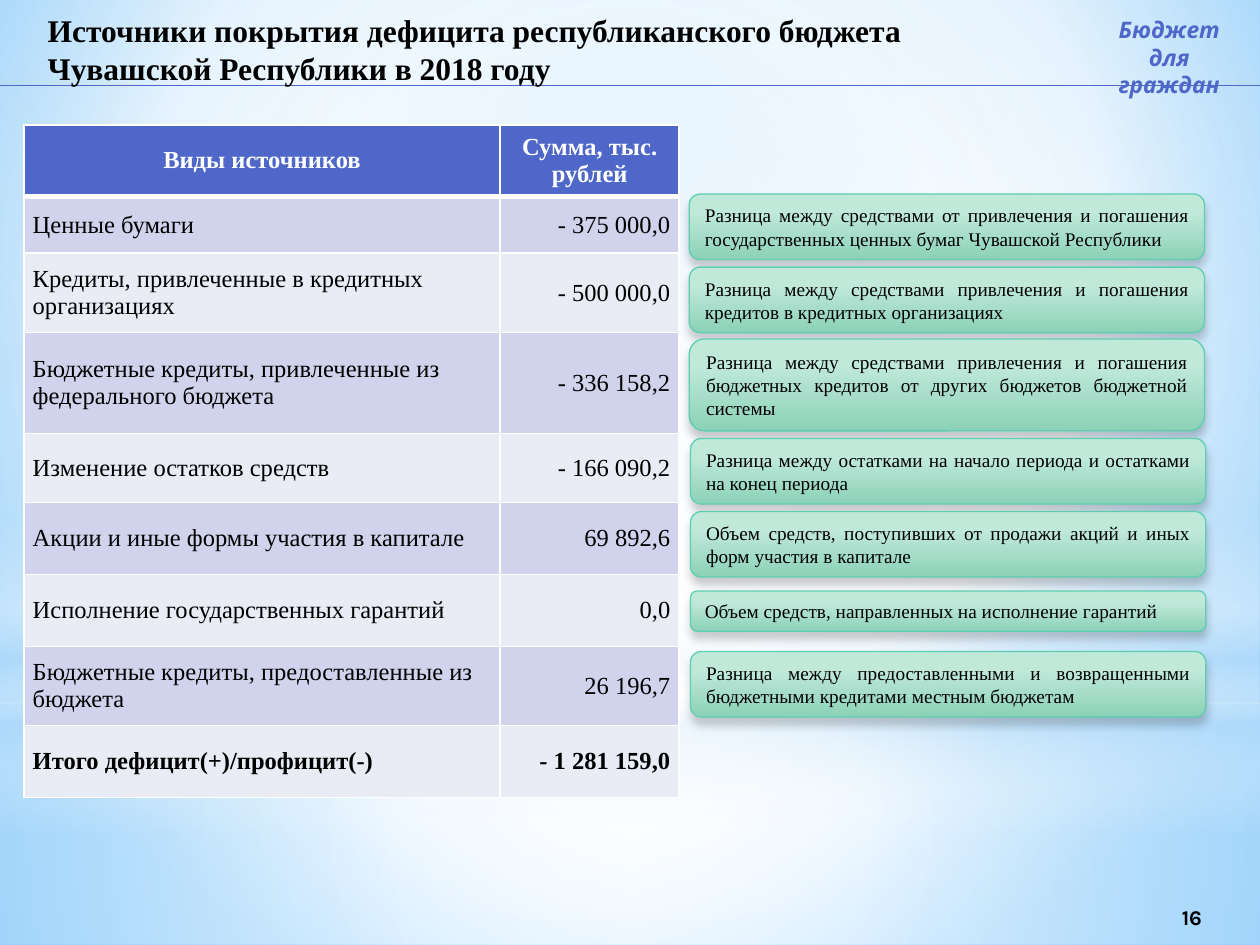
"""Build the slide on sources covering the 2018 republican budget deficit."""
import lxml.etree
import pptx
import pptx.dml.color
import pptx.enum.shapes
import pptx.enum.text
import pptx.oxml
import pptx.oxml.ns
import pptx.util

Inches = pptx.util.Inches
Pt = pptx.util.Pt
RGBColor = pptx.dml.color.RGBColor
ALIGN = pptx.enum.text.PP_ALIGN
ANCHOR = pptx.enum.text.MSO_ANCHOR
SHAPE = pptx.enum.shapes.MSO_SHAPE
qn = pptx.oxml.ns.qn
NAMESPACE = pptx.oxml.ns.nsdecls("a")

BLACK = RGBColor(0x00, 0x00, 0x00)
WHITE = RGBColor(0xFF, 0xFF, 0xFF)
BLUE = RGBColor(0x4E, 0x67, 0xC8)
BAND_DARK = RGBColor(0xD0, 0xD3, 0xEB)
BAND_LIGHT = RGBColor(0xE9, 0xEB, 0xF5)
SKY = RGBColor(0xB4, 0xDC, 0xFA)
SKY_CENTER = RGBColor(0x9E, 0xD5, 0xFF)
SKY_EDGE = RGBColor(0x5B, 0xB9, 0xFF)
MINT_LIGHT = RGBColor(0xC0, 0xE9, 0xDA)
MINT_DARK = RGBColor(0x8C, 0xD1, 0xB8)
MINT_LINE = RGBColor(0x5D, 0xCE, 0xAF)
SERIF = "Times New Roman"
SANS = "Karla"
CENTERED = (50, 50, 50, 50)


def set_gradient(fill, element, stops, focus=None):
    fill.gradient()
    gradient = element.find(".//" + qn("a:gradFill"))
    stop_xml = "".join(
        f'<a:gs pos="{position * 1000}"><a:srgbClr val="{color}">'
        f'<a:alpha val="{opacity * 1000}"/></a:srgbClr></a:gs>'
        for position, color, opacity in stops)
    direction = '<a:lin ang="5400000" scaled="0"/>'
    if focus:
        left, top, right, bottom = (side * 1000 for side in focus)
        direction = (f'<a:path path="circle"><a:fillToRect l="{left}" t="{top}" '
                     f'r="{right}" b="{bottom}"/></a:path>')
    gradient.getparent().replace(gradient, pptx.oxml.parse_xml(
        f'<a:gradFill {NAMESPACE} rotWithShape="1"><a:gsLst>{stop_xml}</a:gsLst>'
        f'{direction}</a:gradFill>'))


def add_run(paragraph, text, size, color, font=SERIF, bold=False, italic=False):
    run = paragraph.add_run()
    run.text = text
    run.font.size = Pt(size)
    run.font.name = font
    run.font.bold = bold
    run.font.italic = italic
    run.font.color.rgb = color


presentation = pptx.Presentation()
presentation.slide_width = Inches(10)
presentation.slide_height = Inches(7.5)
slide = presentation.slides.add_slide(presentation.slide_layouts[6])

set_gradient(slide.background.fill, slide.element,
             [(0, SKY_CENTER, 100), (60, WHITE, 100), (100, SKY_EDGE, 100)],
             (20, 10, 20, 60))

backdrops = [
    (SHAPE.RECTANGLE, 5.58, 1.92, CENTERED,
     [(0, WHITE, 91), (37, WHITE, 76), (100, SKY, 79)]),
    (SHAPE.RECTANGLE, 0, 5.58, CENTERED,
     [(0, WHITE, 89), (48, WHITE, 62), (100, SKY, 79)]),
    (SHAPE.RECTANGLE, 4.12, 2.5, None,
     [(0, WHITE, 0), (29, WHITE, 30), (45, SKY, 40),
      (55, WHITE, 26), (65, SKY, 60), (100, WHITE, 0)]),
    (SHAPE.OVAL, 1.75, 5.58, CENTERED, [(0, WHITE, 100), (56, WHITE, 0)]),
]
for kind, top, height, focus, stops in backdrops:
    shape = slide.shapes.add_shape(kind, 0, Inches(top), Inches(10), Inches(height))
    shape.shadow.inherit = False
    shape.line.fill.background()
    set_gradient(shape.fill, shape.element, stops, focus)

sources = [
    ("Виды источников", "Сумма, тыс. рублей", 0.57),
    ("Ценные бумаги", "- 375 000,0", 0.45),
    ("Кредиты, привлеченные в кредитных организациях", "- 500 000,0", 0.63),
    ("Бюджетные кредиты, привлеченные из федерального бюджета", "- 336 158,2", 0.8),
    ("Изменение остатков средств", "- 166 090,2", 0.55),
    ("Акции и иные формы участия в капитале", "69 892,6", 0.57),
    ("Исполнение государственных гарантий", "0,0", 0.57),
    ("Бюджетные кредиты, предоставленные из бюджета", "26 196,7", 0.63),
    ("Итого дефицит(+)/профицит(-)", "- 1 281 159,0", 0.57),
]
table = slide.shapes.add_table(len(sources), 2, Inches(0.19), Inches(0.99),
                               Inches(5.2), Inches(5.36)).table
table.columns[0].width = Inches(3.78)
table.columns[1].width = Inches(1.42)
for row, (name, amount, height) in enumerate(sources):
    table.rows[row].height = Inches(height)
    header = row == 0
    for column, text in enumerate((name, amount)):
        cell = table.cell(row, column)
        cell.vertical_anchor = ANCHOR.MIDDLE
        cell.margin_left = cell.margin_right = Inches(0.07)
        cell.margin_top = cell.margin_bottom = Inches(0.05)
        cell.fill.solid()
        cell.fill.fore_color.rgb = BLUE if header else (BAND_LIGHT, BAND_DARK)[row % 2]
        paragraph = cell.text_frame.paragraphs[0]
        paragraph.alignment = ALIGN.CENTER if header else (ALIGN.LEFT, ALIGN.RIGHT)[column]
        add_run(paragraph, text, 14, WHITE if header else BLACK,
                bold=row in (0, len(sources) - 1))
        properties = cell._tc.get_or_add_tcPr()
        for index, side in enumerate("LRTB"):
            thick = (row, side) in ((0, "B"), (1, "T"))
            properties.insert(index, pptx.oxml.parse_xml(
                f'<a:ln{side} {NAMESPACE} w="{Pt(3 if thick else 1)}"><a:solidFill>'
                f'<a:srgbClr val="{WHITE}"/></a:solidFill></a:ln{side}>'))

notes = [
    (5.47, 1.54, 0.52, ANCHOR.MIDDLE, "Разница между средствами от привлечения и погашения "
     "государственных ценных бумаг Чувашской Республики"),
    (5.47, 2.12, 0.52, ANCHOR.MIDDLE, "Разница между средствами привлечения и погашения "
     "кредитов в кредитных организациях"),
    (5.47, 2.69, 0.73, ANCHOR.MIDDLE, "Разница между средствами привлечения и погашения "
     "бюджетных кредитов от других бюджетов бюджетной системы"),
    (5.48, 3.48, 0.52, ANCHOR.TOP, "Разница между остатками на начало периода и остатками "
     "на конец периода"),
    (5.48, 4.06, 0.52, ANCHOR.TOP, "Объем средств, поступивших от продажи акций и иных "
     "форм участия в капитале"),
    (5.48, 4.69, 0.32, ANCHOR.TOP, "Объем средств, направленных на исполнение гарантий"),
    (5.48, 5.17, 0.52, ANCHOR.MIDDLE, "Разница между предоставленными и возвращенными "
     "бюджетными кредитами местным бюджетам"),
]
for left, top, height, anchor, text in notes:
    shape = slide.shapes.add_shape(SHAPE.ROUNDED_RECTANGLE, Inches(left), Inches(top),
                                   Inches(4.09), Inches(height))
    set_gradient(shape.fill, shape.element, [(28, MINT_LIGHT, 100), (100, MINT_DARK, 100)])
    shape.line.color.rgb = MINT_LINE
    shape.line.width = Pt(0.75)
    shape.shadow.inherit = False
    shape.element.spPr.find(qn("a:effectLst")).append(pptx.oxml.parse_xml(
        f'<a:outerShdw {NAMESPACE} blurRad="{Pt(5)}" dist="{Pt(4)}" dir="5400000" '
        f'rotWithShape="0"><a:srgbClr val="{BLACK}"><a:alpha val="20000"/></a:srgbClr>'
        f'</a:outerShdw>'))
    frame = shape.text_frame
    frame.word_wrap = True
    frame.auto_size = pptx.enum.text.MSO_AUTO_SIZE.SHAPE_TO_FIT_TEXT
    frame.vertical_anchor = anchor
    paragraph = frame.paragraphs[0]
    paragraph.alignment = ALIGN.JUSTIFY
    add_run(paragraph, text, 11, BLACK)

rule = slide.shapes.add_connector(pptx.enum.shapes.MSO_CONNECTOR.STRAIGHT,
                                  0, Inches(0.68), Inches(10), Inches(0.68))
rule.line.color.rgb = BLUE
rule.line.width = Pt(0.75)
lxml.etree.SubElement(rule.element.spPr, qn("a:effectLst"))

labels = [
    (8.91, 7.08, 1.1, 0.4, ANCHOR.MIDDLE, ALIGN.CENTER, ["16"], 12, BLACK, SANS, False),
    (0.28, 0.04, 7.79, 0.6, ANCHOR.TOP, ALIGN.LEFT,
     ["Источники покрытия дефицита республиканского бюджета Чувашской Республики в 2018 году"],
     18, BLACK, SERIF, False),
    (8.61, 0.08, 1.34, 0.54, ANCHOR.TOP, ALIGN.CENTER, ["Бюджет", "для граждан"],
     13, BLUE, SANS, True),
]
for left, top, width, height, anchor, alignment, lines, size, color, font, italic in labels:
    box = slide.shapes.add_textbox(Inches(left), Inches(top), Inches(width), Inches(height))
    frame = box.text_frame
    frame.word_wrap = True
    frame.vertical_anchor = anchor
    for index, line in enumerate(lines):
        paragraph = frame.add_paragraph() if index else frame.paragraphs[0]
        paragraph.alignment = alignment
        add_run(paragraph, line, size, color, font, True, italic)

presentation.save("out.pptx")
